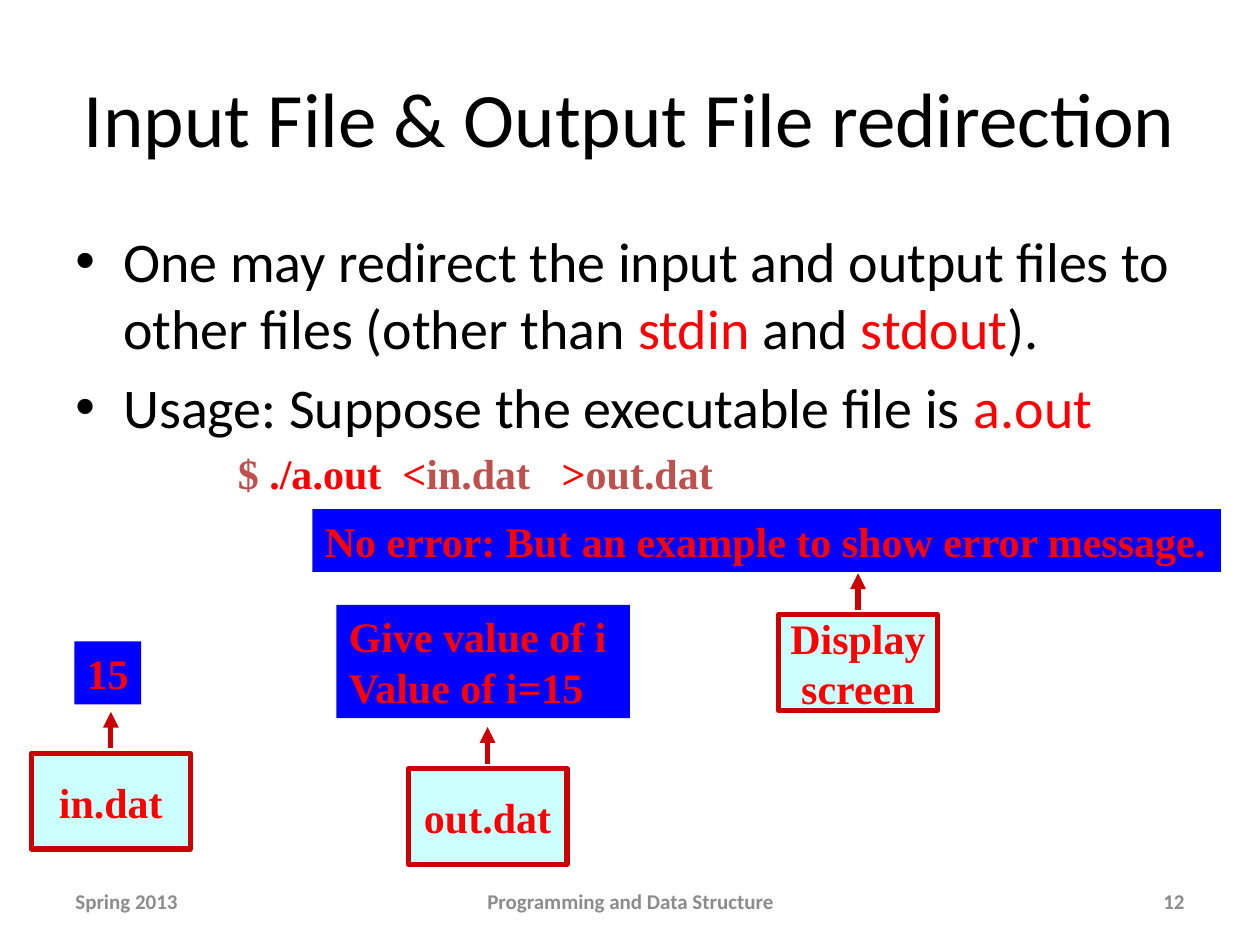
from pptx import Presentation
from pptx import util as u
from pptx.dml.color import RGBColor
from pptx.enum import shapes, text
from pptx.oxml.ns import qn
from lxml import etree

BLACK = RGBColor(0, 0, 0)
RED = RGBColor(255, 0, 0)
BRICK = RGBColor(0xC0, 0x50, 0x4D)
BLUE = RGBColor(0, 0, 255)
CYAN = RGBColor(0xCC, 0xFF, 0xFF)
CRIMSON = RGBColor(0xCC, 0, 0)
GRAY = RGBColor(0x8C, 0x8C, 0x8C)
SANS, SERIF = "Calibri", "Times New Roman"
LEFT, MID, RIGHT = text.PP_ALIGN.LEFT, text.PP_ALIGN.CENTER, text.PP_ALIGN.RIGHT
MIDDLE, TOP = text.MSO_ANCHOR.MIDDLE, text.MSO_ANCHOR.TOP


class Deck:
    def __init__(self):
        self.prs = Presentation()
        self.prs.slide_width = u.Inches(10)
        self.prs.slide_height = u.Inches(7.5)
        self.slide = self.prs.slides.add_slide(self.prs.slide_layouts[5])

    def font(self, run, size, face, color, bold=False):
        font = run.font
        font.size, font.name, font.bold = u.Pt(size), face, bold
        font.color.rgb = color

    def frame(self, shape, anchor, wrap, align=LEFT):
        frame = shape.text_frame
        frame.word_wrap = wrap
        frame.vertical_anchor = anchor
        for para in frame.paragraphs:
            para.alignment = align
        return frame

    def fill(self, para, pieces, *style, bold=False):
        for words, color in pieces:
            run = para.add_run()
            run.text = words
            self.font(run, *style, color, bold)

    def title(self, words, *box):
        shape = self.slide.shapes.title
        shape.left, shape.top, shape.width, shape.height = map(u.Inches, box)
        shape.text_frame.text = words
        frame = self.frame(shape, MIDDLE, True, MID)
        self.font(frame.paragraphs[0].runs[0], 44, SANS, BLACK)

    def area(self, *box):
        return self.slide.shapes.add_textbox(*map(u.Inches, box))

    def body(self, items, *box):
        frame = self.frame(self.area(*box), TOP, True)
        for n, item in enumerate(items):
            para = frame.add_paragraph() if n else frame.paragraphs[0]
            para.space_before = u.Pt(6.4)
            props = para._p.get_or_add_pPr()
            props.set("marL", str(u.Inches(0.38)))
            props.set("indent", str(u.Inches(-0.38)))
            etree.SubElement(props, qn("a:buFont"), typeface="Arial")
            etree.SubElement(props, qn("a:buChar"), char="•")
            self.fill(para, item, 32, SANS)

    def footer(self, words, left, width, align):
        shape = self.area(left, 6.95, width, 0.4)
        shape.text_frame.text = words
        frame = self.frame(shape, MIDDLE, True, align)
        self.font(frame.paragraphs[0].runs[0], 12, SANS, GRAY, True)

    def command(self, pieces, *box):
        frame = self.frame(self.area(*box), TOP, False)
        self.fill(frame.paragraphs[0], pieces, 24, SERIF, bold=True)

    def rect(self, words, box, color, anchor, align, wrap=False):
        shape = self.slide.shapes.add_shape(
            shapes.MSO_SHAPE.RECTANGLE, *map(u.Inches, box))
        shape.shadow.inherit = False
        shape.fill.solid()
        shape.fill.fore_color.rgb = color
        shape.line.fill.background()
        shape.text_frame.text = words
        for para in self.frame(shape, anchor, wrap, align).paragraphs:
            self.font(para.runs[0], 24, SERIF, RED, True)
        return shape

    def output(self, words, *box, wrap=False):
        self.rect(words, box, BLUE, TOP, LEFT, wrap)

    def device(self, words, left, top):
        shape = self.rect(words, (left, top, 1.26, 0.76), CYAN, MIDDLE, MID)
        shape.line.color.rgb = CRIMSON
        shape.line.width = u.Pt(3)
        self.arrow(left + 0.63, top - 0.04, top - 0.33)

    def arrow(self, x, start, end):
        link = self.slide.shapes.add_connector(
            shapes.MSO_CONNECTOR.STRAIGHT, *map(u.Inches, (x, start, x, end)))
        link.line.color.rgb = CRIMSON
        link.line.width = u.Pt(3)
        props = link._element.spPr
        etree.SubElement(props.find(qn("a:ln")), qn("a:tailEnd"), type="triangle")
        etree.SubElement(props, qn("a:effectLst"))


def main():
    deck = Deck()
    deck.title("Input File & Output File redirection", 0.5, 0.3, 9, 1.25)
    deck.body([
        [("One may redirect the input and output files to other files (other than ", BLACK),
         ("stdin", RED), (" and ", BLACK), ("stdout", RED), (").", BLACK)],
        [("Usage: Suppose the executable file is ", BLACK), ("a.out", RED)],
    ], 0.5, 1.75, 9, 4.95)
    deck.footer("Spring 2013", 0.5, 2.33, LEFT)
    deck.footer("Programming and Data Structure", 3.42, 3.17, MID)
    deck.footer("12", 7.17, 2.33, RIGHT)
    deck.command([("$", BRICK), (" ./a.out  <", RED), ("in.dat", BRICK),
                  ("   >", RED), ("out.dat", BRICK)], 1.79, 3.5, 3.97, 0.5)
    deck.output("15", 0.59, 5.09, 0.53, 0.5, wrap=True)
    deck.device("in.dat", 0.25, 5.98)
    deck.output("Give value of i\nValue of i=15", 2.67, 4.8, 2.33, 0.9)
    deck.device("out.dat", 3.24, 6.1)
    deck.output("No error: But an example to show error message.", 2.48, 4.04, 7.21, 0.5)
    deck.device("Display\nscreen", 6.18, 4.88)
    deck.prs.save("out.pptx")


if __name__ == "__main__":
    main()
